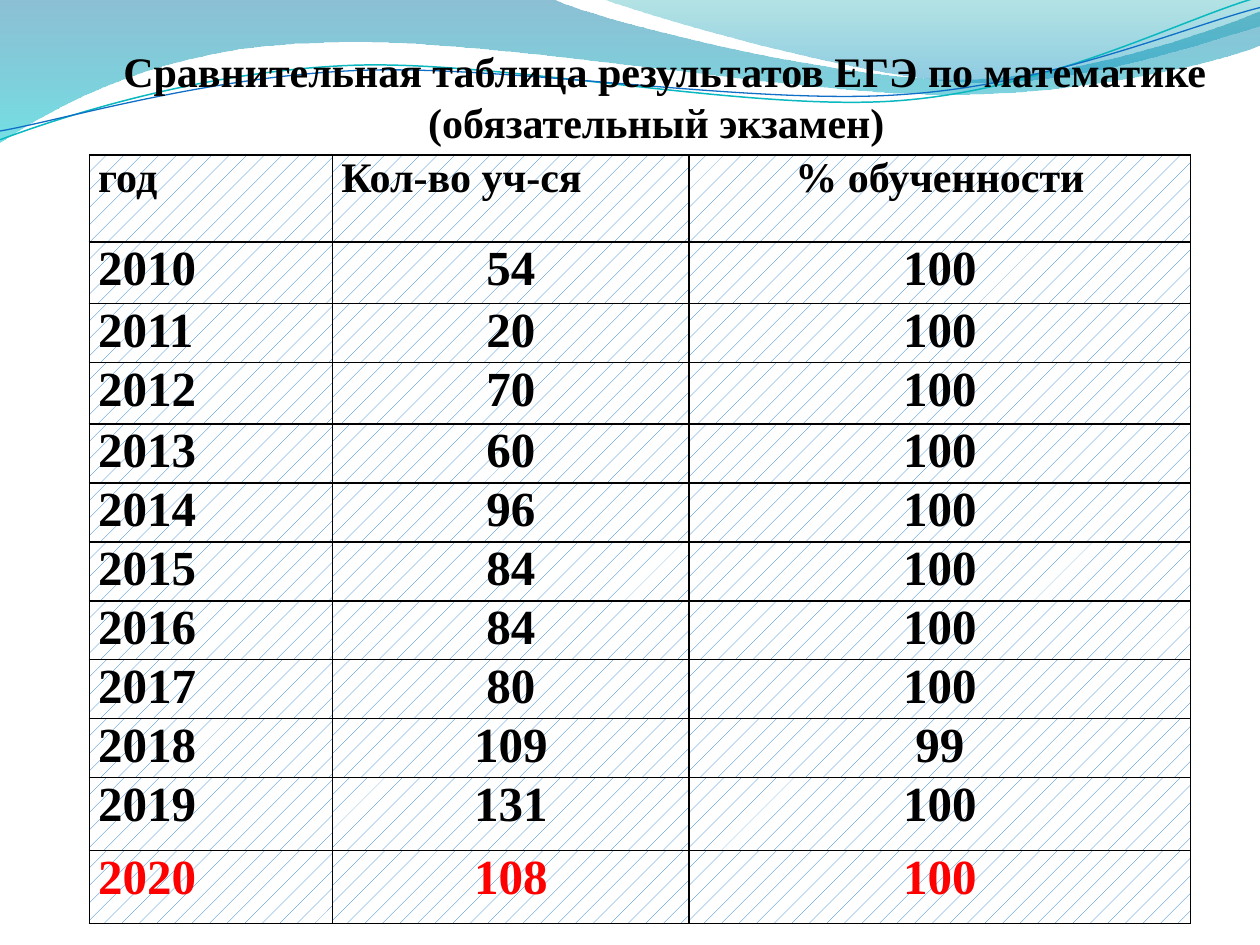
from lxml import etree
from pptx import Presentation
from pptx.dml.color import RGBColor
from pptx.enum.dml import MSO_PATTERN
from pptx.enum.text import MSO_ANCHOR, PP_ALIGN
from pptx.oxml.ns import qn
from pptx.util import Inches, Pt

LEFT, CENTER = PP_ALIGN.LEFT, PP_ALIGN.CENTER
MIDDLE = MSO_ANCHOR.MIDDLE
DOTS = MSO_PATTERN.PERCENT_5

FONT = "Times New Roman"
BLACK, RED, BLUE, WHITE = "000000", "FF0000", "0F6FC6", "FFFFFF"
SLIDE_SIZE = (10, 7.5)
UNITS_PER_INCH = 100

TITLE_BOX = (0.55, 0.31, 9.18, 1.21)
TITLE = [
    ("Сравнительная таблица результатов ЕГЭ по математике", 0.33),
    ("(обязательный экзамен)", 2.75),
]

HEADER = ("год", "Кол-во уч-ся", "% обученности")
RESULTS = [
    (2010, 54, 100), (2011, 20, 100), (2012, 70, 100), (2013, 60, 100),
    (2014, 96, 100), (2015, 84, 100), (2016, 84, 100), (2017, 80, 100),
    (2018, 109, 99), (2019, 131, 100), (2020, 108, 100),
]
TABLE_ORIGIN = (0.71, 1.23)
COLUMN_WIDTHS = (1.93, 2.83, 3.98)
ROW_HEIGHT = 0.46
SPECIAL_ROW_HEIGHTS = {0: 0.69, 1: 0.49, 3: 0.49, 10: 0.58, 11: 0.58}
CELL_MARGINS = {"margin_left": 0.07, "margin_right": 0.07,
                "margin_top": 0, "margin_bottom": 0}

WAVES = [
    {"start": (0, 0),
     "parts": [(4.4, 0),
               (4.76, 0.17, 6.64, 0.63, 7.58, 0.63),
               (8.53, 0.63, 9.58, 0.26, 10, 0.09),
               (10, 0.36),
               (9.83, 0.44, 8.7, 0.76, 7.46, 0.75),
               (6.22, 0.75, 3.82, 0.28, 2.57, 0.34),
               (1.29, 0.36, 0.46, 0.83, 0, 1.13)],
     "stops": [("0074A1", 45), ("00C6CF", 55)]},
    {"start": (4.79, 0),
     "parts": [(5.09, 0.11, 6.82, 0.62, 7.69, 0.65),
               (8.56, 0.69, 9.61, 0.32, 10, 0.21),
               (10, 0)],
     "stops": [("00A1A9", 30), ("008BBF", 45)]},
    {"start": (0, 1.11),
     "parts": [(0.48, 0.93, 1.58, 0.57, 2.77, 0.52),
               (3.95, 0.47, 5.93, 0.89, 7.13, 0.8),
               (8.33, 0.71, 9.38, 0.15, 9.98, -0.02)],
     "line": ("0AB8BF", 0.85)},
    {"start": (0, 1.04),
     "parts": [(0.47, 0.96, 1.64, 0.61, 2.83, 0.56),
               (4.03, 0.51, 5.97, 0.84, 7.17, 0.75),
               (8.36, 0.67, 9.41, 0.21, 10, 0.06)],
     "line": (BLUE, 0.75)},
]


def color(value):
    """Turn a hex string into a colour."""
    return RGBColor.from_string(value)


def to_units(values):
    """Turn inches into whole drawing units."""
    return [round(value * UNITS_PER_INCH) for value in values]


def bend_segments(shape, parts, origin):
    """Turn the straight segments of cubic parts into curves."""
    segments = list(shape._element.spPr.iter(qn("a:lnTo")))
    for segment, part in zip(segments, parts):
        if len(part) == 2:
            continue
        curve = etree.Element(qn("a:cubicBezTo"))
        numbers = to_units(part)
        for x, y in zip(numbers[::2], numbers[1::2]):
            etree.SubElement(curve, qn("a:pt"), x=str(x - origin[0]), y=str(y - origin[1]))
        segment.getparent().replace(segment, curve)


def add_wave(slide, wave):
    """Draw one gradient band or one thin curved line."""
    points = [to_units(part[-2:]) for part in (wave["start"], *wave["parts"])]
    builder = slide.shapes.build_freeform(*points[0], scale=Inches(1) / UNITS_PER_INCH)
    builder.add_line_segments(points[1:], close="stops" in wave)
    shape = builder.convert_to_shape()
    bend_segments(shape, wave["parts"], [min(axis) for axis in zip(*points)])
    shape.shadow.inherit = False
    if "line" in wave:
        line_color, width = wave["line"]
        shape.fill.background()
        shape.line.color.rgb = color(line_color)
        shape.line.width = Pt(width)
        return
    shape.line.fill.background()
    shape.fill.gradient()
    shape.fill.gradient_angle = 270
    for stop, (stop_color, _) in zip(shape.fill.gradient_stops, wave["stops"]):
        stop.color.rgb = color(stop_color)
    stop_elements = shape._element.spPr.iter(qn("a:srgbClr"))
    for element, (_, opacity) in zip(stop_elements, wave["stops"]):
        etree.SubElement(element, qn("a:alpha"), val=str(opacity * 1000))


def write(paragraph, text, size, text_color=BLACK, alignment=LEFT):
    """Add one bold run to a paragraph."""
    paragraph.alignment = alignment
    run = paragraph.add_run()
    run.text = text
    for name, value in {"name": FONT, "size": Pt(size), "bold": True}.items():
        setattr(run.font, name, value)
    run.font.color.rgb = color(text_color)


def add_title(slide):
    """Add the two indented title lines."""
    frame = slide.shapes.add_textbox(*map(Inches, TITLE_BOX)).text_frame
    frame_format = {"word_wrap": True, "vertical_anchor": MIDDLE, "margin_bottom": Inches(0.35)}
    for name, value in frame_format.items():
        setattr(frame, name, value)
    for index, (text, indent) in enumerate(TITLE):
        paragraph = frame.add_paragraph() if index else frame.paragraphs[0]
        write(paragraph, text, 24)
        paragraph._p.get_or_add_pPr().set("marL", str(Inches(indent)))


def add_borders(cell):
    """Give a cell thin black borders on all sides."""
    properties = cell._tc.get_or_add_tcPr()
    for index, side in enumerate(("lnL", "lnR", "lnT", "lnB")):
        border = etree.Element(qn(f"a:{side}"), w=str(Pt(1)))
        fill = etree.SubElement(border, qn("a:solidFill"))
        etree.SubElement(fill, qn("a:srgbClr"), val=BLACK)
        properties.insert(index, border)


def format_cell(cell):
    """Set the margins, pattern fill and borders of a cell."""
    for name, value in CELL_MARGINS.items():
        setattr(cell, name, Inches(value))
    cell.fill.patterned()
    cell.fill.pattern = DOTS
    cell.fill.fore_color.rgb = color(BLUE)
    cell.fill.back_color.rgb = color(WHITE)
    add_borders(cell)


def add_results(slide):
    """Add the table of exam results by year."""
    rows = [HEADER, *RESULTS]
    heights = [SPECIAL_ROW_HEIGHTS.get(index, ROW_HEIGHT) for index in range(len(rows))]
    area = (*TABLE_ORIGIN, sum(COLUMN_WIDTHS), sum(heights))
    table = slide.shapes.add_table(len(rows), len(HEADER), *map(Inches, area)).table
    table.first_row = table.horz_banding = False
    for column, width in zip(table.columns, COLUMN_WIDTHS):
        column.width = Inches(width)
    for row_index, values in enumerate(rows):
        table.rows[row_index].height = Inches(heights[row_index])
        size = 28 if row_index else 24
        text_color = RED if values is RESULTS[-1] else BLACK
        for column_index, value in enumerate(values):
            cell = table.cell(row_index, column_index)
            format_cell(cell)
            centered = column_index == 2 or (row_index and column_index)
            write(cell.text_frame.paragraphs[0], str(value), size, text_color,
                  CENTER if centered else LEFT)


def main():
    """Build and save the slide."""
    presentation = Presentation()
    presentation.slide_width, presentation.slide_height = map(Inches, SLIDE_SIZE)
    slide = presentation.slides.add_slide(presentation.slide_layouts[6])
    for wave in WAVES:
        add_wave(slide, wave)
    add_title(slide)
    add_results(slide)
    presentation.save("out.pptx")


if __name__ == "__main__":
    main()
